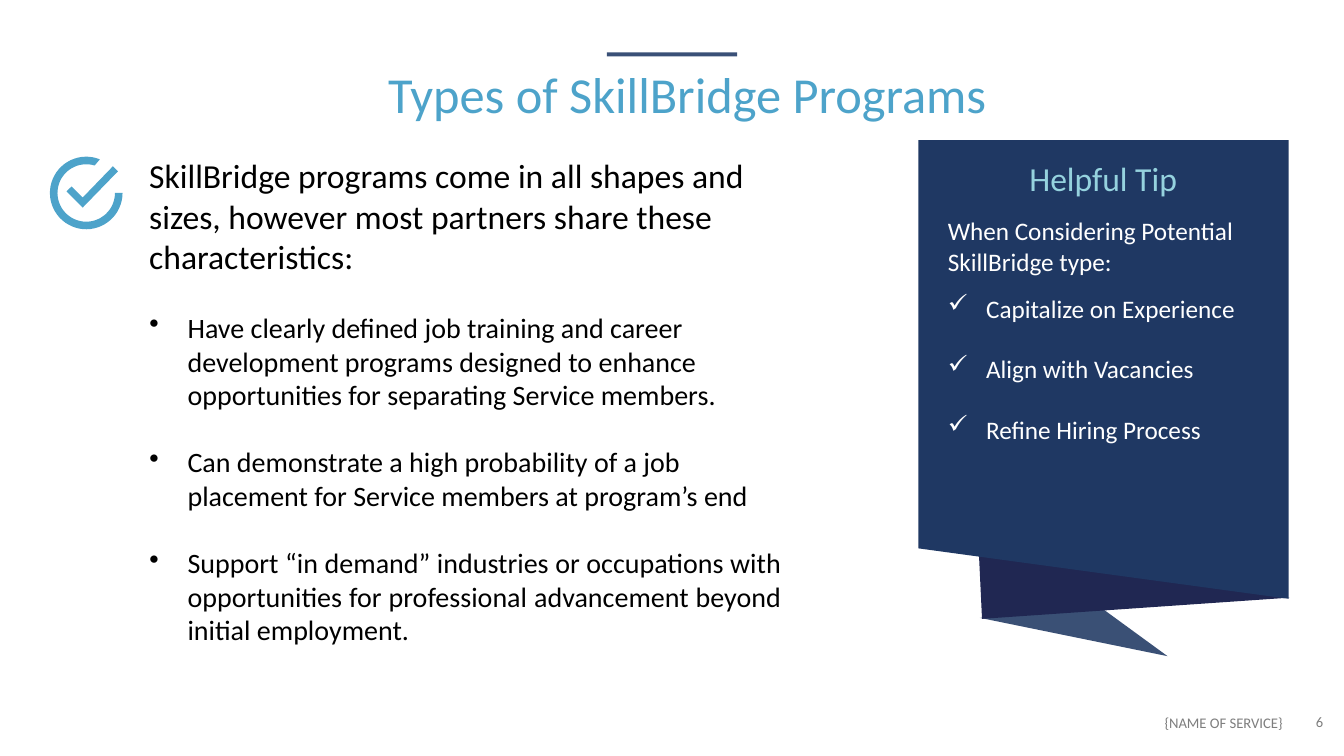
from dataclasses import dataclass
from math import cos, radians, sin

from lxml.etree import SubElement
from pptx import Presentation
from pptx.dml.color import RGBColor
from pptx.enum.shapes import MSO_SHAPE
from pptx.enum.text import PP_ALIGN
from pptx.oxml.ns import qn
from pptx.util import Inches, Pt


@dataclass(frozen=True)
class Theme:
    font: str = "Calibri"
    sky: str = "4DA3CA"
    accent_bar: str = "3A5077"
    navy: str = "1F3863"
    fold: str = "202752"
    aqua: str = "95D2DE"
    black: str = "000000"
    white: str = "FFFFFF"
    grey: str = "7E7E7E"
    title: float = 36
    lead: float = 24
    body: float = 20
    tip: float = 18
    footer: float = 10.5


THEME = Theme()
HANG = 0.38


def paint(shape, color, opacity=None):
    shape.shadow.inherit = False
    shape.fill.solid()
    shape.fill.fore_color.rgb = RGBColor.from_string(color)
    shape.line.fill.background()
    if opacity is not None:
        tint = shape._element.spPr.find(".//" + qn("a:srgbClr"))
        SubElement(tint, qn("a:alpha"), val=str(opacity * 1000))


def add_outline(shapes, contours, color, opacity=None):
    """Draw one filled shape from closed contours given in inches."""
    first, *others = [[(Inches(x), Inches(y)) for x, y in c] for c in contours]
    builder = shapes.build_freeform(*first[0])
    builder.add_line_segments(first[1:], close=True)
    for contour in others:
        builder.move_to(*contour[0])
        builder.add_line_segments(contour[1:], close=True)
    paint(builder.convert_to_shape(), color, opacity)


def add_text_frame(slide, left, top, width, height, inset=0.01):
    box = slide.shapes.add_textbox(
        Inches(left), Inches(top), Inches(width), Inches(height))
    frame = box.text_frame
    frame.word_wrap = True
    frame.margin_left = frame.margin_right = frame.margin_bottom = 0
    frame.margin_top = Inches(inset)
    return frame


def style(paragraph, size, color):
    font = paragraph.font
    font.name = THEME.font
    font.size = Pt(size)
    font.color.rgb = RGBColor.from_string(color)


def set_indent(paragraph, margin, hang=0.0):
    properties = paragraph._p.get_or_add_pPr()
    properties.set("marL", str(Inches(margin)))
    properties.set("indent", str(-Inches(hang)))
    return properties


def write_line(slide, place, text, size, color, margin=0.01, inset=0.01):
    frame = add_text_frame(slide, *place, inset=inset)
    line = frame.paragraphs[0]
    line.text = text
    set_indent(line, margin)
    style(line, size, color)
    return frame


def add_bullet(paragraph, text, mark, size, color, space_before=None):
    paragraph.text = text
    properties = set_indent(paragraph, HANG + 0.01, HANG)
    if space_before:
        paragraph.space_before = Pt(space_before)
    SubElement(properties, qn("a:buChar"), char=mark)
    style(paragraph, size, color)


def arc(center, radius, start, end, step=6):
    x, y = center
    count = round(abs(end - start) / step)
    angles = [radians(start + (end - start) * i / count) for i in range(count + 1)]
    return [(x + radius * cos(a), y + radius * sin(a)) for a in angles]


def add_check_icon(slide):
    center = (0.855, 1.915)
    ring = arc(center, 0.36, 0, 292) + arc(center, 0.285, 287, 0)
    tick = [(0.71, 1.85), (0.66, 1.9), (0.82, 2.06),
            (1.17, 1.7), (1.12, 1.65), (0.82, 1.96)]
    add_outline(slide.shapes, [ring, tick], THEME.sky)


def add_title(slide):
    bar = slide.shapes.add_shape(
        MSO_SHAPE.RECTANGLE, Inches(6.02), Inches(0.52), Inches(1.29), Inches(0.04))
    paint(bar, THEME.accent_bar)
    write_line(slide, (3.15, 0.56, 7.33, 0.68), "Types of SkillBridge Programs",
               THEME.title, THEME.sky, margin=0.7, inset=0.07)


def add_characteristics(slide):
    write_line(slide, (1.47, 1.53, 6.1, 0.43),
               "SkillBridge programs come in all shapes and", THEME.lead, THEME.black)
    write_line(slide, (1.47, 1.93, 5.61, 0.83),
               "sizes, however most partners share these characteristics:",
               THEME.lead, THEME.black)

    characteristics = [
        "Have clearly defined job training and career development programs "
        "designed to enhance opportunities for separating Service members.",
        "Can demonstrate a high probability of a job placement for Service "
        "members at program’s end",
        "Support “in demand” industries or occupations with opportunities for "
        "professional advancement beyond initial employment.",
    ]
    frame = add_text_frame(slide, 1.47, 3.07, 6.28, 3.36)
    for i, text in enumerate(characteristics):
        paragraph = frame.add_paragraph() if i else frame.paragraphs[0]
        add_bullet(paragraph, text, "•", THEME.body, THEME.black, 24 if i else None)
    paragraph.alignment = PP_ALIGN.JUSTIFY


def add_tip_banner(slide):
    # Folded ribbon, from the tail to the front panel
    ribbon = slide.shapes.add_group_shape().shapes
    add_outline(ribbon, [[(10.95, 6.05), (9.72, 6.13), (11.58, 6.51)]], THEME.navy, 88)
    add_outline(ribbon, [[(9.71, 5.51), (9.74, 6.14), (12.79, 5.93)]], THEME.fold)
    add_outline(ribbon, [[(12.78, 1.39), (9.11, 1.39), (9.11, 5.44), (12.78, 5.94)]],
                THEME.navy)

    # Heading, introduction and checklist
    write_line(slide, (10.2, 1.56, 1.5, 0.43), "Helpful Tip", THEME.lead, THEME.aqua)
    frame = write_line(slide, (9.39, 2.13, 2.88, 2.3),
                       "When Considering Potential SkillBridge type:",
                       THEME.tip, THEME.white)
    checklist = [("Capitalize on Experience", 12), ("Align with Vacancies", 21.6),
                 ("Refine Hiring Process", 21.6)]
    for text, gap in checklist:
        add_bullet(frame.add_paragraph(), text, "✓", THEME.tip, THEME.white, gap)


def add_footer(slide):
    frame = add_text_frame(slide, 11.54, 7.1, 1.62, 0.19, inset=0)
    line = frame.paragraphs[0]
    line.line_spacing = Pt(12.7)
    tabs = SubElement(set_indent(line, 0.01), qn("a:tabLst"))
    SubElement(tabs, qn("a:tab"), pos=str(Inches(1.39)), algn="l")
    style(line, THEME.footer, THEME.grey)
    line.add_run().text = "{NAME OF SERVICE}\t"
    page_number = line.add_run()
    page_number.text = "6"
    page_number.font.size = Pt(THEME.tip)
    page_number._r.get_or_add_rPr().set("baseline", "2000")


def main():
    presentation = Presentation()
    presentation.slide_width = Inches(13.33)
    presentation.slide_height = Inches(7.5)
    slide = presentation.slides.add_slide(presentation.slide_layouts[6])
    add_title(slide)
    add_check_icon(slide)
    add_characteristics(slide)
    add_tip_banner(slide)
    add_footer(slide)
    presentation.save("out.pptx")


if __name__ == "__main__":
    main()
